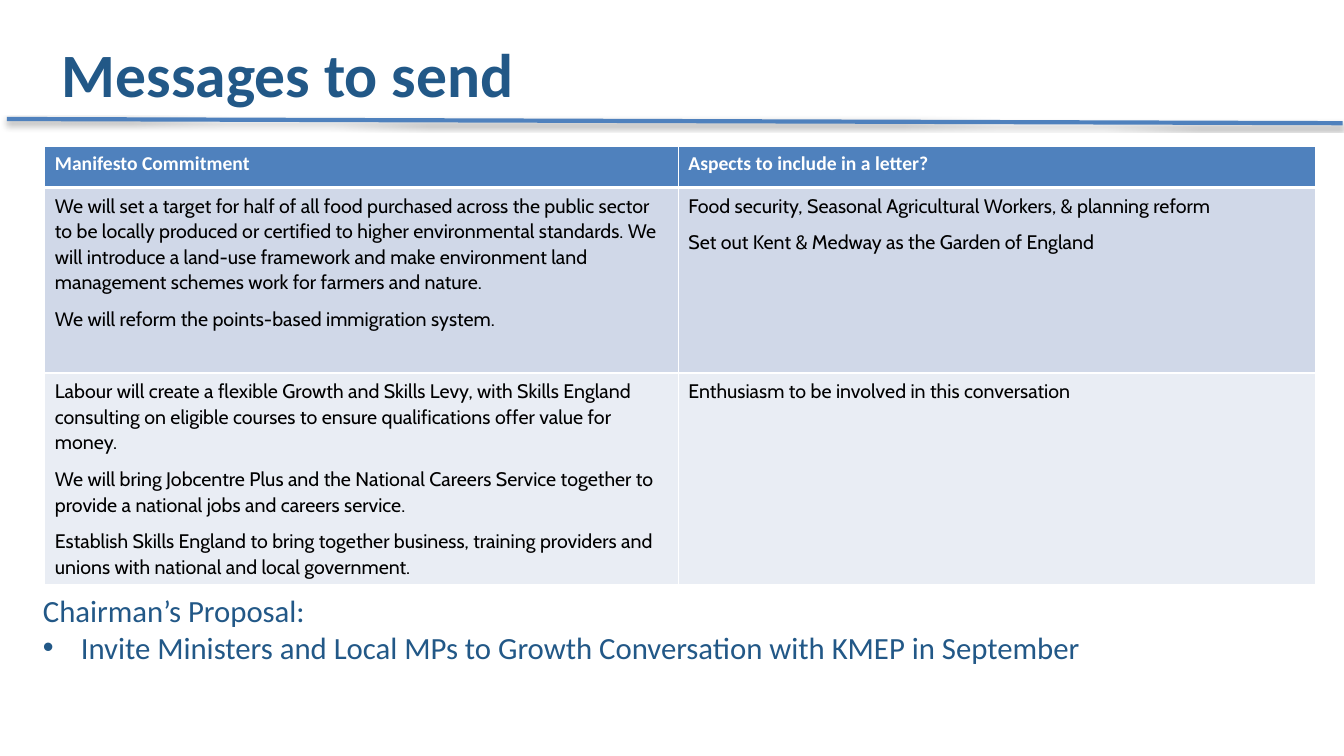
from dataclasses import dataclass

from lxml.etree import SubElement
from pptx import Presentation
from pptx.dml.color import RGBColor
from pptx.enum.shapes import MSO_CONNECTOR
from pptx.enum.text import MSO_ANCHOR, MSO_AUTO_SIZE, PP_ALIGN
from pptx.oxml import parse_xml
from pptx.oxml.ns import nsdecls, qn
from pptx.util import Pt


@dataclass(frozen=True)
class Theme:
    heading_font: str = "Calibri"
    body_font: str = "Cabin"
    navy: str = "225887"
    blue: str = "4F81BD"
    white: str = "FFFFFF"
    black: str = "000000"
    bands: tuple = ("D0D8E8", "E9EDF4")
    title_size: float = 44
    proposal_size: float = 22
    table_size: float = 14


def write(paragraph, text, *, font, size, color, bold=False, spacing=1.0, after=0):
    paragraph.alignment = PP_ALIGN.LEFT
    paragraph.line_spacing = spacing
    paragraph.space_before = Pt(0)
    paragraph.space_after = Pt(after)
    run = paragraph.add_run()
    run.text = text
    run.font.name = font
    run.font.size = Pt(size)
    run.font.bold = bold
    run.font.color.rgb = RGBColor.from_string(color)


def write_all(frame, texts, **style):
    for index, text in enumerate(texts):
        paragraph = frame.add_paragraph() if index else frame.paragraphs[0]
        write(paragraph, text, **style)


class SlideBuilder:
    def __init__(self, slide, theme):
        self.slide = slide
        self.theme = theme

    def place(self, placeholder, left, top, width, height, anchor):
        placeholder.left, placeholder.top = Pt(left), Pt(top)
        placeholder.width, placeholder.height = Pt(width), Pt(height)
        frame = placeholder.text_frame
        frame.word_wrap = True
        frame.auto_size = MSO_AUTO_SIZE.NONE
        frame.vertical_anchor = anchor
        return frame

    def title(self, text, *box):
        theme = self.theme
        frame = self.place(self.slide.shapes.title, *box, MSO_ANCHOR.MIDDLE)
        write_all(frame, [text], font=theme.heading_font, size=theme.title_size,
                  color=theme.navy, bold=True)

    def proposal(self, lead, actions, *box):
        theme = self.theme
        frame = self.place(self.slide.placeholders[1], *box, MSO_ANCHOR.TOP)
        write_all(frame, [lead, *actions], font=theme.heading_font,
                  size=theme.proposal_size, color=theme.navy)
        for index, paragraph in enumerate(frame.paragraphs):
            properties = paragraph._p.get_or_add_pPr()
            indent = Pt(27) if index else 0
            properties.set("marL", str(indent))
            properties.set("indent", str(-indent))
            if index:
                SubElement(properties, qn("a:buFont"), typeface="Arial")
                SubElement(properties, qn("a:buChar"), char="•")
            else:
                SubElement(properties, qn("a:buNone"))

    def rule(self, *ends):
        divider = self.slide.shapes.add_connector(
            MSO_CONNECTOR.STRAIGHT, *(Pt(value) for value in ends))
        divider.line.color.rgb = RGBColor.from_string(self.theme.blue)
        divider.line.width = Pt(3)
        divider._element.spPr.append(parse_xml(
            f'<a:effectLst {nsdecls("a")}><a:outerShdw blurRad="{Pt(3.1)}" '
            f'dist="{Pt(1.8)}" dir="5400000" rotWithShape="0">'
            f'<a:srgbClr val="{self.theme.black}"><a:alpha val="35000"/>'
            '</a:srgbClr></a:outerShdw></a:effectLst>'))

    def borders(self, cell, top, bottom):
        properties = cell._tc.get_or_add_tcPr()
        widths = {"lnL": 1, "lnR": 1, "lnT": top, "lnB": bottom}
        for index, (side, width) in enumerate(widths.items()):
            properties.insert(index, parse_xml(
                f'<a:{side} {nsdecls("a")} w="{Pt(width)}"><a:solidFill>'
                f'<a:srgbClr val="{self.theme.white}"/></a:solidFill></a:{side}>'))

    def table(self, left, top, widths, heights, contents):
        theme = self.theme
        table = self.slide.shapes.add_table(
            len(heights), len(widths), Pt(left), Pt(top),
            Pt(sum(widths)), Pt(sum(heights))).table
        for column, width in zip(table.columns, widths):
            column.width = Pt(width)
        header = dict(font=theme.heading_font, size=theme.table_size,
                      color=theme.white, bold=True)
        body = dict(font=theme.body_font, size=theme.table_size,
                    color=theme.black, spacing=1.07, after=8)
        fills = (theme.blue, *theme.bands)
        for index, (height, texts) in enumerate(zip(heights, contents)):
            table.rows[index].height = Pt(height)
            for cell, paragraphs in zip(table.rows[index].cells, texts):
                cell.fill.solid()
                cell.fill.fore_color.rgb = RGBColor.from_string(fills[index])
                self.borders(cell, top=3 if index == 1 else 1,
                             bottom=3 if index == 0 else 1)
                write_all(cell.text_frame, paragraphs, **(body if index else header))


COMMITMENTS = [
    (["Manifesto Commitment"], ["Aspects to include in a letter?"]),
    (
        ["We will set a target for half of all food purchased across the public "
         "sector to be locally produced or certified to higher environmental "
         "standards. We will introduce a land-use framework and make environment "
         "land management schemes work for farmers and nature.",
         "We will reform the points-based immigration system."],
        ["Food security, Seasonal Agricultural Workers, & planning reform",
         "Set out Kent & Medway as the Garden of England"],
    ),
    (
        ["Labour will create a flexible Growth and Skills Levy, with Skills England "
         "consulting on eligible courses to ensure qualifications offer value for "
         "money.",
         "We will bring Jobcentre Plus and the National Careers Service together to "
         "provide a national jobs and careers service.",
         "Establish Skills England to bring together business, training providers "
         "and unions with national and local government."],
        ["Enthusiasm to be involved in this conversation"],
    ),
]


def main():
    presentation = Presentation()
    presentation.slide_width, presentation.slide_height = Pt(960), Pt(540)
    slide = presentation.slides.add_slide(presentation.slide_layouts[1])
    messages = SlideBuilder(slide, Theme())
    messages.title("Messages to send", 37, 0, 828, 104.5)
    messages.rule(5, 85, 959, 88)
    messages.table(32, 104.5, (452.5, 455.5), (29.5, 132.5, 150.5), COMMITMENTS)
    messages.proposal(
        "Chairman’s Proposal:",
        ["Invite Ministers and Local MPs to Growth Conversation with KMEP in September"],
        23.5, 419, 785.5, 60.5)
    presentation.save("out.pptx")


if __name__ == "__main__":
    main()
